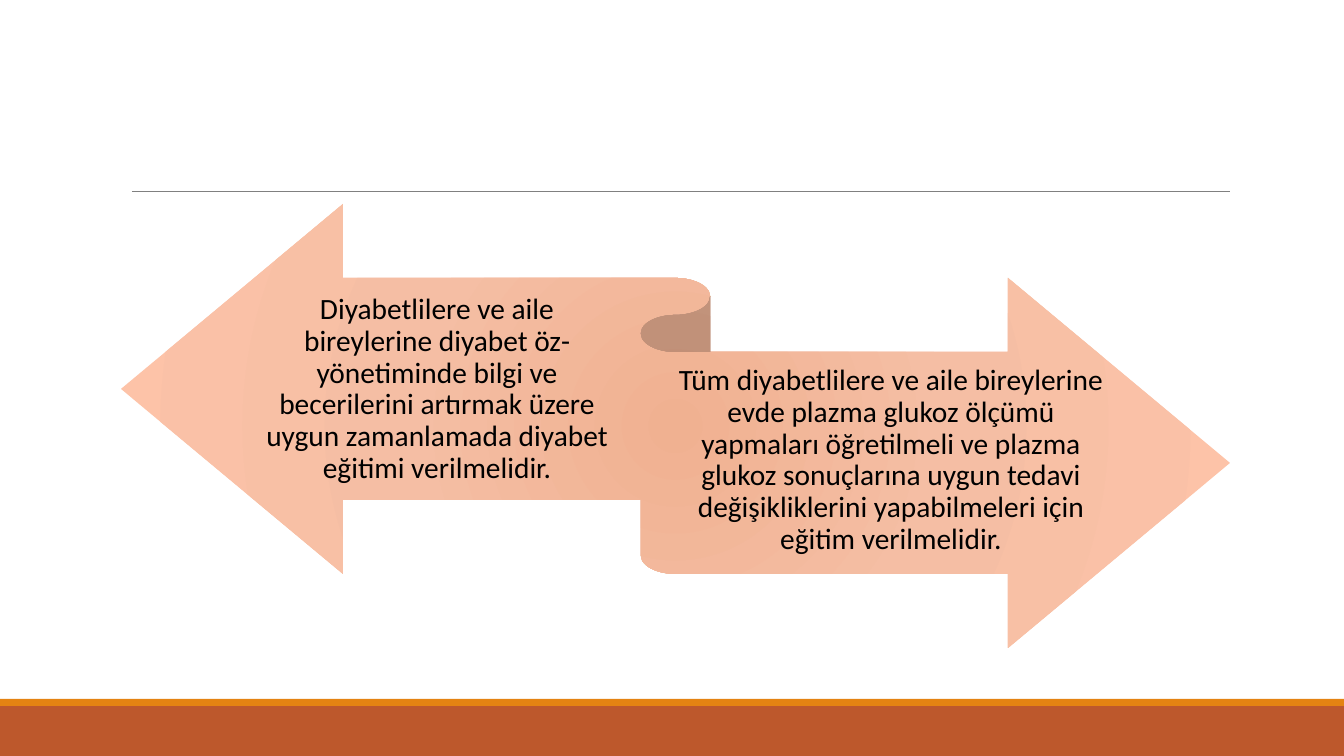
from pptx import Presentation, util as u
from pptx.dml.color import RGBColor
from pptx.enum import shapes, text
from pptx.oxml import parse_xml
from pptx.oxml.ns import nsdecls, qn

PX = 12192000 / 1344
BLACK = RGBColor(0, 0, 0)
GRAY = RGBColor(0x80, 0x80, 0x80)
RUST = RGBColor(0xBD, 0x58, 0x2C)
AMBER = RGBColor(0xE4, 0x83, 0x12)
PEACH = ((0, RGBColor(0xF0, 0xB1, 0x91)), (45, RGBColor(0xF5, 0xBE, 0xA4)),
         (100, RGBColor(0xFD, 0xC3, 0xA8)))
LEFT = ("Diyabetlilere ve aile bireylerine diyabet öz-yönetiminde bilgi ve "
        "becerilerini artırmak üzere uygun zamanlamada diyabet eğitimi verilmelidir.")
RIGHT = ("Tüm diyabetlilere ve aile bireylerine evde plazma glukoz ölçümü "
         "yapmaları öğretilmeli ve plazma glukoz sonuçlarına uygun tedavi "
         "değişikliklerini yapabilmeleri için eğitim verilmelidir.")


def emu(*vals):
    """Turn px lengths into EMU."""
    return [u.Emu(round(v * PX)) for v in vals]


def shape(slide, kind, *box):
    """Add a preset shape without line or shadow."""
    item = slide.shapes.add_shape(kind, *emu(*box))
    item.shadow.inherit = False
    item.line.fill.background()
    return item


def write(slide, words, box, size=21, color=BLACK, font="Calibri"):
    """Add a centred text box."""
    frame = slide.shapes.add_textbox(*emu(*box)).text_frame
    frame.word_wrap = True
    frame.vertical_anchor = text.MSO_ANCHOR.MIDDLE
    (frame.margin_left, frame.margin_top,
     frame.margin_right, frame.margin_bottom) = emu(0, 8, 0, 9)
    para = frame.paragraphs[0]
    para.alignment = text.PP_ALIGN.CENTER
    para.line_spacing = 0.9
    run = para.add_run()
    run.text = words
    run.font.size = u.Pt(size)
    run.font.name = font
    run.font.color.rgb = color


def footer(slide, x, y, w, h):
    """Draw the thin amber band above the rust band."""
    thin = 7
    for color, top, high in ((RUST, y + thin, h - thin), (AMBER, y, thin)):
        band = shape(slide, shapes.MSO_SHAPE.RECTANGLE, x, top, w, high)
        band.fill.solid()
        band.fill.fore_color.rgb = color


def rule(slide, x, y, w):
    """Draw the gray line under the title area."""
    line = slide.shapes.add_connector(
        shapes.MSO_CONNECTOR.STRAIGHT, *emu(x, y, x + w, y))
    line.line.color.rgb = GRAY
    line.line.width = u.Pt(0.5)
    props = line._element.spPr
    props.append(props.makeelement(qn("a:effectLst"), {}))


def ribbon(slide, x, y, w, h):
    """Draw the two-way ribbon with a text on each arm."""
    band = shape(slide, shapes.MSO_SHAPE.LEFT_RIGHT_RIBBON, x, y, w, h)
    stops = "".join(f'<a:gs pos="{at * 1000}"><a:srgbClr val="{color}"/></a:gs>'
                    for at, color in PEACH)
    grad = parse_xml(
        f'<a:gradFill {nsdecls("a")} rotWithShape="1"><a:gsLst>{stops}</a:gsLst>'
        '<a:path path="circle"><a:fillToRect l="100000" t="100000" '
        'r="100000" b="100000"/></a:path></a:gradFill>')
    band._element.spPr.find(qn("a:prstGeom")).addnext(grad)
    write(slide, LEFT, (x + 133, y + 77, 366, 218))
    write(slide, RIGHT, (x + 554, y + 148, 432, 218))


def main():
    """Build and save the slide."""
    deck = Presentation()
    deck.slide_width, deck.slide_height = emu(1344, 756)
    slide = deck.slides.add_slide(deck.slide_layouts[6])
    footer(slide, 0, 699, 1344, 57)
    rule(slide, 132, 191, 1098)
    ribbon(slide, 121, 204, 1109, 444)
    deck.save("out.pptx")


if __name__ == "__main__":
    main()
